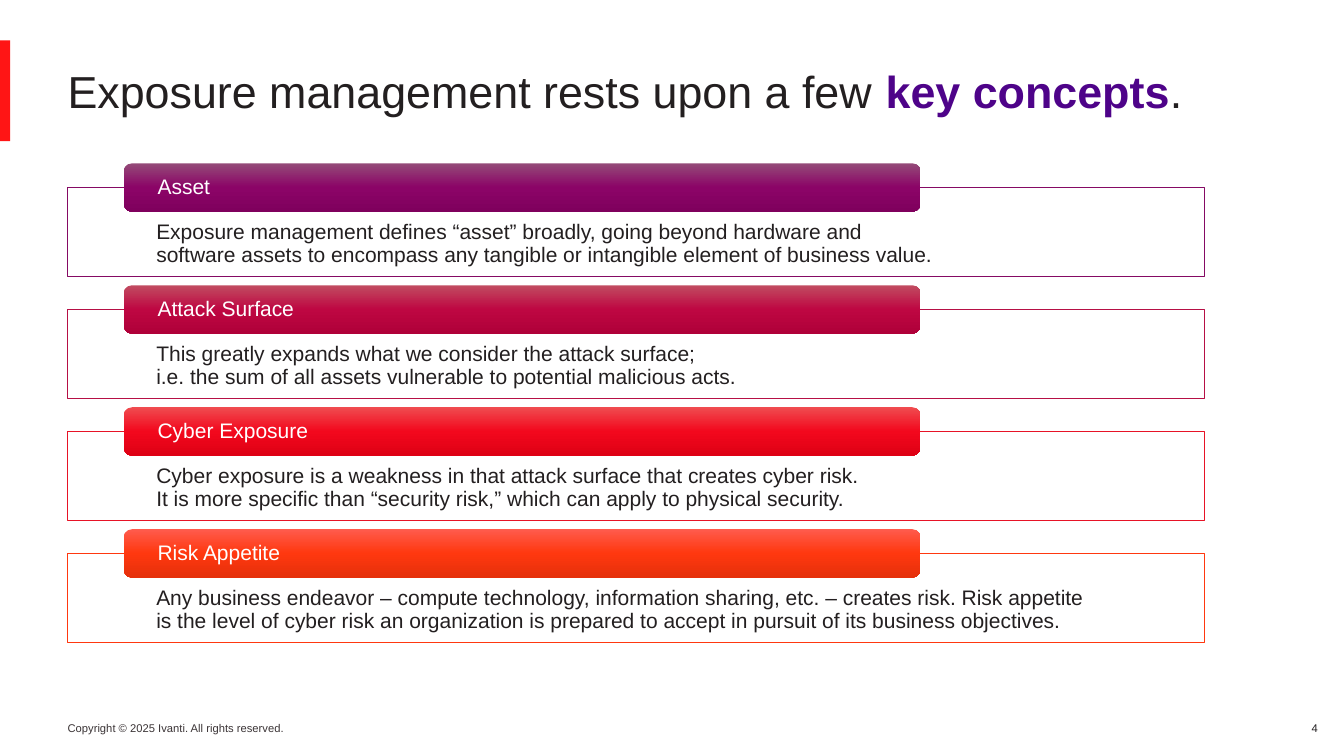
from copy import deepcopy
from lxml import etree
from pptx import Presentation
from pptx.dml.color import RGBColor
from pptx.enum.shapes import MSO_SHAPE
from pptx.enum.text import MSO_ANCHOR, MSO_AUTO_SIZE, PP_ALIGN
from pptx.oxml.ns import qn
from pptx.util import Inches, Pt

RECT, ROUND = MSO_SHAPE.RECTANGLE, MSO_SHAPE.ROUNDED_RECTANGLE
TOP, MIDDLE = MSO_ANCHOR.TOP, MSO_ANCHOR.MIDDLE
LEFT, RIGHT = PP_ALIGN.LEFT, PP_ALIGN.RIGHT
FIXED = MSO_AUTO_SIZE.NONE

THEME = {
    "font": "Arial",
    "ink": "231F20", "note": "3B3436", "white": "FFFFFF",
    "key": "4E0389", "mark": "FF1515",
    "title": 32, "body": 15, "small": 8, "rule": 0.5,
}

TITLE = [
    ("Exposure management rests upon a few ", "ink", False),
    ("key concepts", "key", True),
    (".", "ink", False),
]

CARDS = [
    ("Asset",
     "Exposure management defines “asset” broadly, going beyond hardware and\n"
     "software assets to encompass any tangible or intangible element of business value.",
     "850A64", ("944B78", "8B0467", "7F005D")),
    ("Attack Surface",
     "This greatly expands what we consider the attack surface;\n"
     "i.e. the sum of all assets vulnerable to potential malicious acts.",
     "B60F45", ("C14C61", "BE0742", "AF0039")),
    ("Cyber Exposure",
     "Cyber exposure is a weakness in that attack surface that creates cyber risk.\n"
     "It is more specific than “security risk,” which can apply to physical security.",
     "E71326", ("F04C50", "F2081D", "DE0014")),
    ("Risk Appetite",
     "Any business endeavor – compute technology, information sharing, etc. – creates risk. Risk appetite\n"
     "is the level of cyber risk an organization is prepared to accept in pursuit of its business objectives.",
     "FF380F", ("FF5B4D", "FF380F", "E5300B")),
]

NOTES = [
    ("Copyright © 2025 Ivanti. All rights reserved.", "note", LEFT, (0.67, 7.11, 2.28, 0.24)),
    ("4", "ink", RIGHT, (12.69, 7.11, 0.48, 0.24)),
]

EDGE, FIRST, STEP = 0.67, 1.86, 1.21
WIDE, HIGH = 11.28, 0.88
TAB_IN, TAB_UP, TAB_WIDE, TAB_HIGH = 0.56, 0.24, 7.9, 0.48


def put(item, vals):
    for name, val in vals.items():
        setattr(item, name, val)


def box(*nums):
    return [Inches(num) for num in nums]


def rgb(name):
    return RGBColor.from_string(THEME.get(name, name))


def style(run, size, tint, bold=False):
    put(run.font, {"name": THEME["font"], "size": Pt(THEME[size]), "bold": bold})
    run.font.color.rgb = rgb(tint)


def setup(frame, pads, anchor=TOP, wrap=True):
    left, top, right, base = box(*pads)
    put(frame, {"margin_left": left, "margin_top": top, "margin_right": right,
                "margin_bottom": base, "vertical_anchor": anchor,
                "word_wrap": wrap, "auto_size": FIXED})


def write(frame, text, size, tint, align=LEFT, gap=1.0):
    para = frame.paragraphs[0]
    para.text = text
    put(para, {"alignment": align, "line_spacing": gap})
    for run in para.runs:
        style(run, size, tint)
    for brk in para._p.findall(qn("a:br")):
        brk.append(deepcopy(para.runs[0].font._element))


def block(slide, kind, place, fill):
    shape = slide.shapes.add_shape(kind, *box(*place))
    shape.shadow.inherit = False
    shape.line.fill.background()
    if isinstance(fill, tuple):
        shape.fill.gradient()
        shape.fill.gradient_angle = 270
        stops = shape._element.spPr.find(".//" + qn("a:gsLst"))
        stops.append(deepcopy(stops[0]))
        for num, stop in enumerate(shape.fill.gradient_stops):
            stop.color.rgb = rgb(fill[num])
            stop.position = num / 2
    else:
        shape.fill.solid()
        shape.fill.fore_color.rgb = rgb(fill)
    return shape


def card(slide, top, name, text, edge, shades):
    body = block(slide, RECT, (EDGE, top, WIDE, HIGH), "white")
    tone = body._element.spPr.find(".//" + qn("a:srgbClr"))
    etree.SubElement(tone, qn("a:alpha"), val="90000")
    body.line.color.rgb = rgb(edge)
    body.line.width = Pt(THEME["rule"])
    setup(body.text_frame, (0.88, 0.34, 0.88, 0.12))
    write(body.text_frame, text, "body", "ink", gap=0.9)
    tab = block(slide, ROUND, (EDGE + TAB_IN, top - TAB_UP, TAB_WIDE, TAB_HIGH), shades)
    setup(tab.text_frame, (0.31, 0, 0.31, 0), MIDDLE)
    write(tab.text_frame, name, "body", "white", gap=0.9)


def main():
    deck = Presentation()
    put(deck, {"slide_width": Inches(13.33), "slide_height": Inches(7.5)})
    slide = deck.slides.add_slide(deck.slide_layouts[5])

    head = slide.shapes.title
    left, top, width, height = box(EDGE, 0.59, 12.01, 0.62)
    put(head, {"left": left, "top": top, "width": width, "height": height})
    setup(head.text_frame, (0, 0, 0.1, 0), MIDDLE)
    para = head.text_frame.paragraphs[0]
    para.alignment = LEFT
    for text, tint, bold in TITLE:
        run = para.add_run()
        run.text = text
        style(run, "title", tint, bold)

    block(slide, RECT, (0, 0.4, 0.1, 1), "mark")
    for num, item in enumerate(CARDS):
        card(slide, FIRST + num * STEP, *item)
    for text, tint, align, place in NOTES:
        note = slide.shapes.add_textbox(*box(*place))
        setup(note.text_frame, (0, 0.05, 0.1, 0.05), wrap=align == RIGHT)
        write(note.text_frame, text, "small", tint, align)

    deck.save("out.pptx")


if __name__ == "__main__":
    main()
